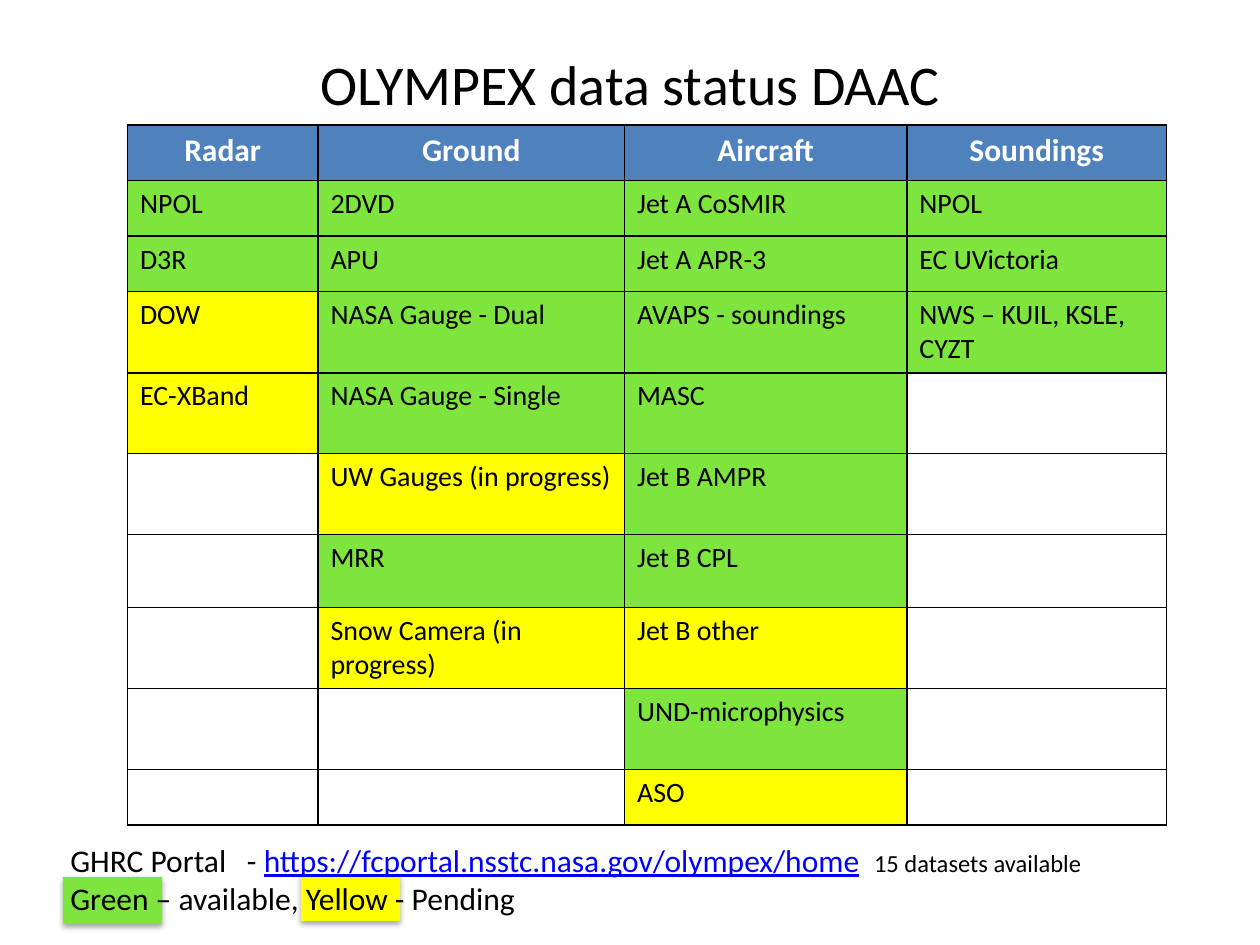
from lxml import etree
from pptx import Presentation
from pptx.dml.color import RGBColor
from pptx.enum.shapes import MSO_SHAPE
from pptx.enum.text import MSO_ANCHOR, PP_ALIGN
from pptx.oxml.ns import qn
from pptx.util import Cm, Pt

RECTANGLE = MSO_SHAPE.RECTANGLE
MIDDLE = MSO_ANCHOR.MIDDLE
CENTER = PP_ALIGN.CENTER
LEFT = PP_ALIGN.LEFT
TITLE_ONLY = 5

COLORS = {
    "available": "7EE53E",
    "pending": "FFFF00",
    "header": "4F81BD",
    "empty": "FFFFFF",
    "white": "FFFFFF",
    "black": "000000",
    "link": "0000FF",
}
HEADERS = ["Radar", "Ground", "Aircraft", "Soundings"]
DATASETS = [
    ["NPOL", "2DVD", "Jet A CoSMIR", "NPOL"],
    ["D3R", "APU", "Jet A APR-3", "EC UVictoria"],
    ["DOW", "NASA Gauge - Dual", "AVAPS - soundings", "NWS – KUIL, KSLE, CYZT"],
    ["EC-XBand", "NASA Gauge - Single", "MASC", ""],
    ["", "UW Gauges (in progress)", "Jet B AMPR", ""],
    ["", "MRR", "Jet B CPL", ""],
    ["", "Snow Camera (in progress)", "Jet B other", ""],
    ["", "", "UND-microphysics", ""],
    ["", "", "ASO", ""],
]
PENDING = {
    "DOW", "EC-XBand", "UW Gauges (in progress)",
    "Snow Camera (in progress)", "Jet B other", "ASO",
}
COLUMN_WIDTHS = [3.84, 6.18, 5.69, 5.24]
ROW_HEIGHTS = [1.12, 1.12, 1.12, 1.63, 1.63, 1.63, 1.47, 1.63, 1.63, 1.12]


def rgb(name):
    return RGBColor.from_string(COLORS[name])


def format_font(font, size, color="black", **values):
    font.color.rgb = rgb(color)
    values = {"name": "Calibri", "size": Pt(size), **values}
    for name, value in values.items():
        setattr(font, name, value)


def add_child(parent, tag, **attributes):
    return etree.SubElement(parent, qn(tag), attributes)


def add_title(page, text):
    title = page.shapes.title
    place = {"left": Cm(1.27), "top": Cm(0.77), "width": Cm(22.86), "height": Cm(1.8)}
    for name, value in place.items():
        setattr(title, name, value)
    frame = title.text_frame
    frame.text = text
    frame.vertical_anchor = MIDDLE
    para = frame.paragraphs[0]
    para.alignment = CENTER
    format_font(para.runs[0].font, 32)


def add_key_patch(page, left, top, color):
    patch = page.shapes.add_shape(RECTANGLE, Cm(left), Cm(top), Cm(2), Cm(0.94))
    patch.fill.solid()
    patch.fill.fore_color.rgb = rgb(color)
    patch.line.fill.background()
    patch.shadow.inherit = False
    effects = patch.element.spPr.find(qn("a:effectLst"))
    shadow = add_child(effects, "a:outerShdw", blurRad="40000", dist="23000",
                       dir="5400000", rotWithShape="0")
    tint = add_child(shadow, "a:srgbClr", val=COLORS["black"])
    add_child(tint, "a:alpha", val="35000")


def add_borders(cell):
    properties = cell._tc.get_or_add_tcPr()
    for side in ("a:lnL", "a:lnR", "a:lnT", "a:lnB"):
        line = add_child(properties, side, w=str(Pt(1)))
        fill = add_child(line, "a:solidFill")
        add_child(fill, "a:srgbClr", val=COLORS["black"])


def fill_cell(cell, text, status):
    is_header = status == "header"
    add_borders(cell)
    cell.fill.solid()
    cell.fill.fore_color.rgb = rgb(status)
    para = cell.text_frame.paragraphs[0]
    para.alignment = CENTER if is_header else LEFT
    if text:
        span = para.add_run()
        span.text = text
        format_font(span.font, 18 if is_header else 16,
                    "white" if is_header else "black", bold=is_header)


def dataset_status(text):
    if not text:
        return "empty"
    return "pending" if text in PENDING else "available"


def add_status_table(page):
    frame = page.shapes.add_table(
        len(ROW_HEIGHTS), len(COLUMN_WIDTHS), Cm(2.57), Cm(2.52),
        Cm(sum(COLUMN_WIDTHS)), Cm(sum(ROW_HEIGHTS)))
    table = frame.table
    table.horz_banding = False
    for column, width in zip(table.columns, COLUMN_WIDTHS):
        column.width = Cm(width)
    for row, height in zip(table.rows, ROW_HEIGHTS):
        row.height = Cm(height)
    for index, text in enumerate(HEADERS):
        fill_cell(table.cell(0, index), text, "header")
    for row_index, names in enumerate(DATASETS, start=1):
        for index, text in enumerate(names):
            fill_cell(table.cell(row_index, index), text, dataset_status(text))


def add_tab_stops(para, positions):
    stops = add_child(para._p.get_or_add_pPr(), "a:tabLst")
    for position in positions:
        add_child(stops, "a:tab", pos=str(Cm(position)), algn="l")


def add_span(para, text, size=18, color="black", **values):
    span = para.add_run()
    span.text = text
    format_font(span.font, size, color, **values)


def add_portal_note(page):
    box = page.shapes.add_textbox(Cm(1.17), Cm(16.83), Cm(23.14), Cm(1.8))
    box.text_frame.word_wrap = True
    para = box.text_frame.paragraphs[0]
    add_tab_stops(para, [3.56, 16.2])
    add_span(para, "GHRC Portal\t- ")
    add_span(para, "https://fcportal.nsstc.nasa.gov/olympex/home",
             color="link", underline=True)
    add_span(para, "\t15 datasets available", size=14)
    para.add_line_break()
    add_span(para, "Green – available, Yellow - Pending")


def main():
    deck = Presentation()
    deck.slide_width, deck.slide_height = Cm(25.4), Cm(19.05)
    page = deck.slides.add_slide(deck.slide_layouts[TITLE_ONLY])
    add_key_patch(page, 6.07, 17.63, "pending")
    add_key_patch(page, 1.27, 17.68, "available")
    add_title(page, "OLYMPEX data status DAAC")
    add_status_table(page)
    add_portal_note(page)
    deck.save("out.pptx")


if __name__ == "__main__":
    main()
